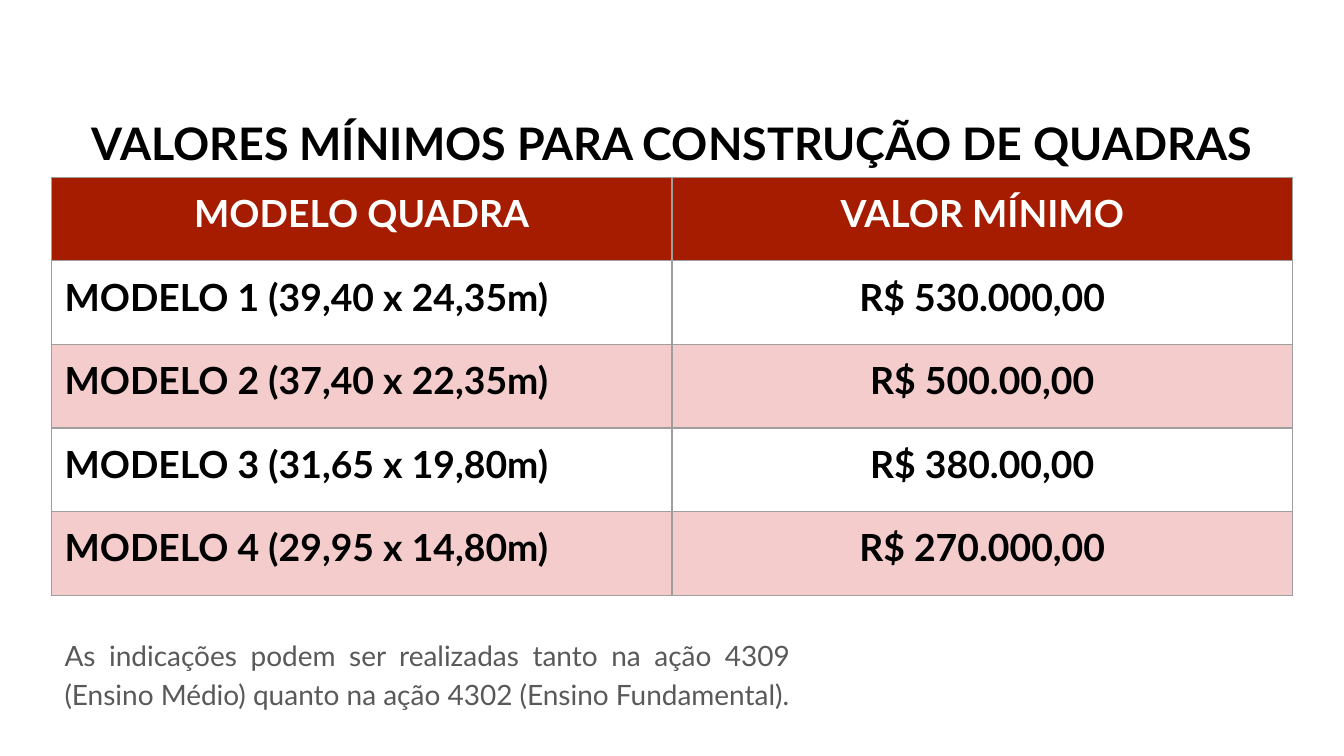
from dataclasses import dataclass
from typing import Any

import lxml.etree
import pptx
import pptx.dml.color
import pptx.enum.text
import pptx.oxml.ns
import pptx.util

Cm = pptx.util.Cm
Pt = pptx.util.Pt
Align = pptx.enum.text.PP_ALIGN
Anchor = pptx.enum.text.MSO_ANCHOR

FONT = "Lato"
INSET = Cm(0.25)
BLACK, WHITE, GREY = "000000", "FFFFFF", "595959"
RED, PINK, BORDER = "A61C00", "F4CCCC", "9E9E9E"
COLUMN_WIDTH, ROW_HEIGHT = 11.73, 1.58


@dataclass
class TextStyle:
    size: int
    color: str
    bold: bool
    paragraph: dict[str, Any]


@dataclass
class TextBox:
    text: str
    left: float
    top: float
    width: float
    height: float
    anchor: Any
    style: TextStyle


ROWS = [
    ("MODELO QUADRA", "VALOR MÍNIMO"),
    ("MODELO 1 (39,40 x 24,35m)", "R$ 530.000,00"),
    ("MODELO 2 (37,40 x 22,35m)", "R$ 500.00,00"),
    ("MODELO 3 (31,65 x 19,80m)", "R$ 380.00,00"),
    ("MODELO 4 (29,95 x 14,80m)", "R$ 270.000,00"),
]

BOXES = [
    TextBox(
        "VALORES MÍNIMOS PARA CONSTRUÇÃO DE QUADRAS",
        0.86, 1.65, 23.67, 1.6, Anchor.MIDDLE,
        TextStyle(24, BLACK, True, {"alignment": Align.CENTER, "line_spacing": 1.5}),
    ),
    TextBox(
        "As indicações podem ser realizadas tanto na ação 4309 (Ensino Médio) "
        "quanto na ação 4302 (Ensino Fundamental).",
        0.97, 11.73, 14.22, 2.06, Anchor.TOP,
        TextStyle(15, GREY, False, {
            "alignment": Align.JUSTIFY, "line_spacing": 1.15, "space_after": Pt(16),
        }),
    ),
]


def rgb(color: str) -> pptx.dml.color.RGBColor:
    return pptx.dml.color.RGBColor.from_string(color)


def set_values(target: Any, values: dict[str, Any]) -> None:
    for name, value in values.items():
        setattr(target, name, value)


def write(frame: Any, text: str, style: TextStyle) -> None:
    para = frame.paragraphs[0]
    set_values(para, style.paragraph)
    span = para.add_run()
    span.text = text
    set_values(span.font, {"name": FONT, "size": Pt(style.size), "bold": style.bold})
    span.font.color.rgb = rgb(style.color)


def add_text_box(page: Any, item: TextBox) -> None:
    box = page.shapes.add_textbox(
        Cm(item.left), Cm(item.top), Cm(item.width), Cm(item.height)
    )
    frame = box.text_frame
    set_values(frame, {
        "word_wrap": True, "vertical_anchor": item.anchor,
        "margin_left": INSET, "margin_right": INSET,
        "margin_top": INSET, "margin_bottom": INSET,
    })
    write(frame, item.text, item.style)


def add_borders(cell: Any) -> None:
    """Outline a cell; call before filling it, as the schema wants lines first."""
    qn = pptx.oxml.ns.qn
    properties = cell._tc.get_or_add_tcPr()
    for side in ("a:lnL", "a:lnR", "a:lnT", "a:lnB"):
        line = lxml.etree.SubElement(properties, qn(side), w=str(Pt(0.75)))
        fill = lxml.etree.SubElement(line, qn("a:solidFill"))
        lxml.etree.SubElement(fill, qn("a:srgbClr"), val=BORDER)


def fill_cell(cell: Any, color: str | None) -> None:
    if color is None:
        cell.fill.background()
    else:
        cell.fill.solid()
        cell.fill.fore_color.rgb = rgb(color)


def add_price_table(page: Any) -> None:
    table = page.shapes.add_table(
        len(ROWS), 2, Cm(0.97), Cm(3.35),
        Cm(2 * COLUMN_WIDTH), Cm(len(ROWS) * ROW_HEIGHT),
    ).table
    for column in table.columns:
        column.width = Cm(COLUMN_WIDTH)
    for row_index, texts in enumerate(ROWS):
        table.rows[row_index].height = Cm(ROW_HEIGHT)
        is_header = row_index == 0
        band = RED if is_header else PINK if row_index % 2 == 0 else None
        for column_index, text in enumerate(texts):
            cell = table.cell(row_index, column_index)
            set_values(cell, {
                "margin_left": INSET, "margin_right": INSET,
                "margin_top": INSET, "margin_bottom": INSET,
            })
            add_borders(cell)
            fill_cell(cell, band)
            centred = is_header or column_index == 1
            alignment = Align.CENTER if centred else Align.LEFT
            color = WHITE if is_header else BLACK
            style = TextStyle(20, color, True, {"alignment": alignment})
            write(cell.text_frame, text, style)


def main() -> None:
    deck = pptx.Presentation()
    set_values(deck, {"slide_width": Cm(25.4), "slide_height": Cm(14.29)})
    page = deck.slides.add_slide(deck.slide_layouts[6])
    add_price_table(page)
    for item in BOXES:
        add_text_box(page, item)
    deck.save("out.pptx")


if __name__ == "__main__":
    main()
